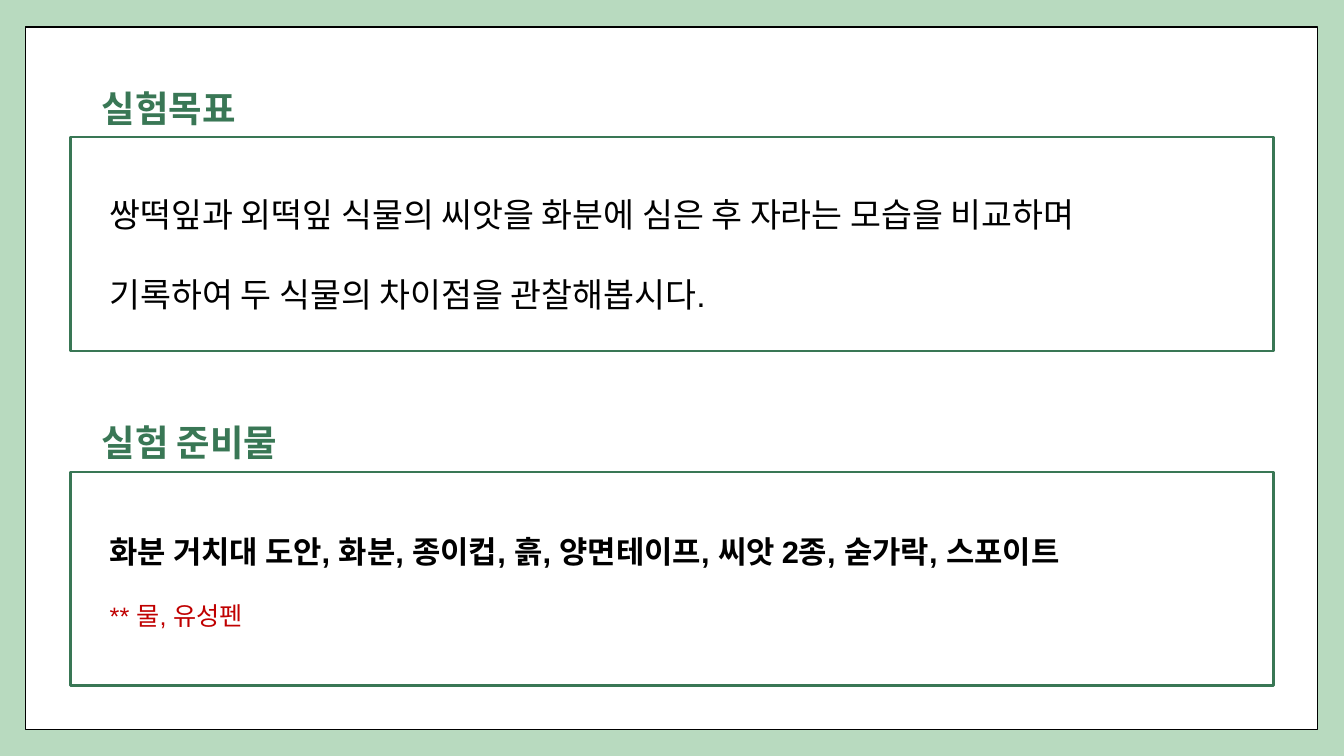
from pptx import Presentation
from pptx.dml.color import RGBColor as RGB
from pptx.enum.shapes import MSO_SHAPE as Kind
from pptx.enum.text import MSO_ANCHOR as Anchor, MSO_AUTO_SIZE as Auto
from pptx.util import Inches, Pt

HUES = {"mint": "B8DABF", "white": "FFFFFF", "black": "000000",
        "green": "397755", "red": "C00000"}
LEFT, WIDE, TALL = 0.7, 11.93, 2.12   # frame edge and size
TOP, STEP = 1.36, 3.32                # first frame and distance to the next


def hue(name):
    return RGB.from_string(HUES[name])


def add_box(slide, x, y, w, h, line, weight):
    box = slide.shapes.add_shape(Kind.RECTANGLE, *map(Inches, (x, y, w, h)))
    box.shadow.inherit = False
    box.fill.solid()
    box.fill.fore_color.rgb = hue("white")
    box.line.color.rgb = hue(line)
    box.line.width = Pt(weight)


def add_text(slide, x, y, w, h, lines, pad=None, space=None, grow=False):
    """Each line is a pair: its text and a dict of its format."""
    box = slide.shapes.add_textbox(*map(Inches, (x, y, w, h)))
    frame = box.text_frame
    frame.word_wrap = True
    frame.vertical_anchor = Anchor.TOP
    frame.auto_size = Auto.SHAPE_TO_FIT_TEXT if grow else Auto.NONE
    if pad is not None:
        frame.margin_left = frame.margin_right = Inches(pad)
        frame.margin_top = frame.margin_bottom = Inches(pad)
    for i, (text, form) in enumerate(lines):
        para = frame.paragraphs[0] if i == 0 else frame.add_paragraph()
        if space:
            para.line_spacing = space
        style_run(para.add_run(), text, **form)


def style_run(run, text, size=24, font="Arial", color="black", bold=False):
    run.text = text
    run.font.size = Pt(size)
    run.font.name = font
    run.font.bold = bold
    run.font.color.rgb = hue(color)


def add_part(slide, row, title, width, lines, drop):
    """A heading, its frame and the text inside."""
    y = TOP + row * STEP
    head = dict(size=26, font="Calibri", color="green", bold=True)
    add_text(slide, LEFT + 0.21, y - 0.61, width, 0.48, [(title, head)], pad=0.1)
    add_box(slide, LEFT, y, WIDE, TALL, "green", 1.75)
    add_text(slide, LEFT + 0.29, y + drop, 11.53, 1.5, lines, space=2.0, grow=True)


def main():
    deck = Presentation()
    deck.slide_width, deck.slide_height = Inches(13.33), Inches(7.5)
    slide = deck.slides.add_slide(deck.slide_layouts[6])

    # Background and white sheet
    slide.background.fill.solid()
    slide.background.fill.fore_color.rgb = hue("mint")
    add_box(slide, 0.25, 0.27, 12.82, 6.97, "black", 1)

    # Goal
    add_part(slide, 0, "실험목표", 1.96, [
        ("쌍떡잎과 외떡잎 식물의 씨앗을 화분에 심은 후 자라는 모습을 비교하며", {}),
        ("기록하여 두 식물의 차이점을 관찰해봅시다.", {}),
    ], drop=0.11)

    # Materials
    add_part(slide, 1, "실험 준비물", 2.3, [
        ("화분 거치대 도안, 화분, 종이컵, 흙, 양면테이프, 씨앗 2종, 숟가락, 스포이트",
         dict(size=22, bold=True)),
        ("** 물, 유성펜", dict(size=18, color="red")),
    ], drop=0.19)

    deck.save("out.pptx")


if __name__ == "__main__":
    main()
